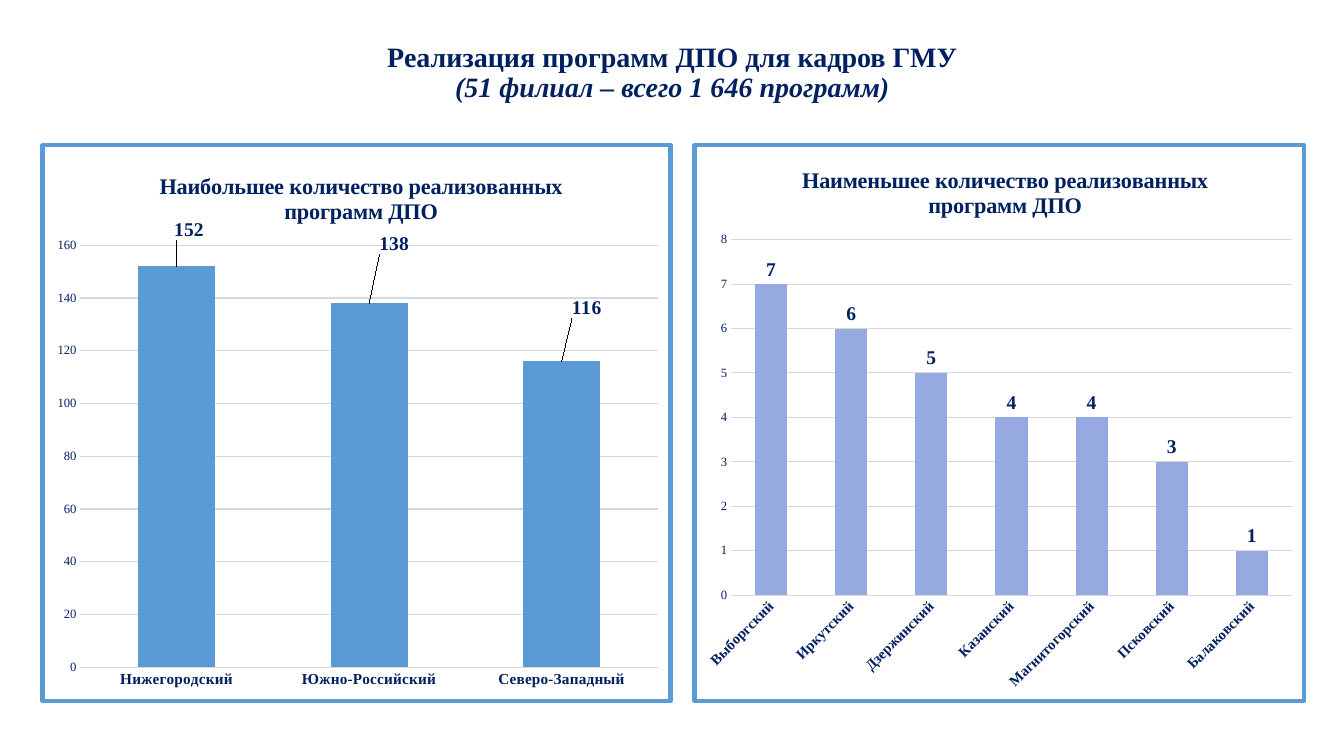
from dataclasses import dataclass

from lxml import etree
from pptx import Presentation
from pptx.chart.data import CategoryChartData
from pptx.dml.color import RGBColor
from pptx.enum import chart as ch, text as tx
from pptx.oxml import parse_xml
from pptx.oxml.ns import nsdecls, qn
from pptx.util import Cm, Pt

NAVY = RGBColor(0x00, 0x20, 0x60)
BLUE = RGBColor(0x5B, 0x9B, 0xD5)
LILAC = RGBColor(0x97, 0xA9, 0xE1)
GRID = RGBColor(0xD9, 0xD9, 0xD9)
FONT = "Times New Roman"


@dataclass(frozen=True)
class Panel:
    heading: str
    left: float
    width: float
    branches: dict[str, int]
    bar_color: RGBColor
    maximum: int
    step: int
    branch_size: float
    rotation: int
    heading_place: tuple[float, ...]
    plot_place: tuple[float, ...]
    label_shifts: tuple[tuple[float, float], ...] = ()


PANELS = [
    Panel(
        "Наибольшее количество реализованных программ ДПО",
        1.02, 15.93,
        {"Нижегородский": 152, "Южно-Российский": 138, "Северо-Западный": 116},
        BLUE, 160, 20, 11, 0,
        (0.18, 0.04), (0.06, 0.18, 0.92, 0.76),
        ((0.02, -0.04), (0.04, -0.08), (0.04, -0.07)),
    ),
    Panel(
        "Наименьшее количество реализованных программ ДПО",
        17.45, 15.47,
        {"Выборгский": 7, "Иркутский": 6, "Дзержинский": 5, "Казанский": 4,
         "Магнитогорский": 4, "Псковский": 3, "Балаковский": 1},
        LILAC, 8, 1, 10.5, -45,
        (0.17, 0.03), (0.06, 0.17, 0.92, 0.64),
    ),
]


def style_font(font, size: float, bold: bool = False, italic: bool = False) -> None:
    font.name = FONT
    font.size = Pt(size)
    font.bold = bold
    font.italic = italic
    font.color.rgb = NAVY


def write(paragraph, text: str, **style) -> None:
    run = paragraph.add_run()
    run.text = text
    style_font(run.font, **style)


def manual_layout(place: tuple[float, ...], shift: bool = False) -> etree._Element:
    target = "" if len(place) == 2 else '<c:layoutTarget val="inner"/>'
    modes = "" if shift else '<c:xMode val="edge"/><c:yMode val="edge"/>'
    sizes = "".join(f'<c:{key} val="{value}"/>' for key, value in zip("xywh", place))
    return parse_xml(
        f'<c:layout {nsdecls("c")}><c:manualLayout>{target}{modes}{sizes}'
        "</c:manualLayout></c:layout>"
    )


def set_layout(parent, layout: etree._Element, index: int) -> None:
    for old in parent.findall(qn("c:layout")):
        parent.remove(old)
    parent.insert(index, layout)


def draw_border(chart) -> None:
    border = parse_xml(
        f'<c:spPr {nsdecls("c", "a")}><a:noFill/><a:ln w="{Pt(3)}">'
        f'<a:solidFill><a:srgbClr val="{BLUE}"/></a:solidFill></a:ln></c:spPr>'
    )
    chart.element.find(qn("c:chart")).addnext(border)


def style_axes(chart, panel: Panel) -> None:
    branches, counts = chart.category_axis, chart.value_axis
    for axis in (branches, counts):
        axis.major_tick_mark = axis.minor_tick_mark = ch.XL_TICK_MARK.NONE
        axis.format.line.fill.background()
    style_font(branches.tick_labels.font, panel.branch_size, bold=True)
    body = branches._element.find(qn("c:txPr")).find(qn("a:bodyPr"))
    body.set("rot", str(panel.rotation * 60000))
    style_font(counts.tick_labels.font, 9)
    counts.minimum_scale = 0
    counts.maximum_scale = panel.maximum
    counts.major_unit = panel.step
    grid = counts.major_gridlines.format.line
    grid.color.rgb = GRID
    grid.width = Pt(0.75)


def style_bars(plot, panel: Panel) -> None:
    plot.gap_width = 150
    plot.vary_by_categories = False
    bars = plot.series[0]
    bars.format.fill.solid()
    bars.format.fill.fore_color.rgb = panel.bar_color
    labels = bars.data_labels
    labels.show_value = True
    labels.position = ch.XL_LABEL_POSITION.OUTSIDE_END
    style_font(labels.font, 14, bold=True)
    for index, shift in enumerate(panel.label_shifts):
        label = bars.points[index].data_label
        style_font(label.font, 14, bold=True)
        label.position = ch.XL_LABEL_POSITION.OUTSIDE_END
        entry = labels._element.findall(qn("c:dLbl"))[index]
        set_layout(entry, manual_layout(shift, shift=True), 1)


def draw_panel(slide, panel: Panel) -> None:
    data = CategoryChartData()
    data.categories = list(panel.branches)
    data.add_series("Программы ДПО", list(panel.branches.values()))
    chart = slide.shapes.add_chart(
        ch.XL_CHART_TYPE.COLUMN_CLUSTERED,
        Cm(panel.left), Cm(3.61), Cm(panel.width), Cm(14.1), data,
    ).chart
    chart.has_legend = False
    chart.font.name = FONT
    chart.font.size = Pt(10)
    chart.has_title = True
    heading = chart.chart_title.text_frame.paragraphs[0]
    heading.alignment = tx.PP_ALIGN.CENTER
    write(heading, panel.heading, size=16, bold=True)
    set_layout(chart.chart_title._element, manual_layout(panel.heading_place), 1)
    plot_area = chart.element.find(qn("c:chart")).find(qn("c:plotArea"))
    set_layout(plot_area, manual_layout(panel.plot_place), 0)
    style_axes(chart, panel)
    style_bars(chart.plots[0], panel)
    draw_border(chart)


def draw_title(slide) -> None:
    frame = slide.shapes.add_textbox(Cm(2.34), Cm(0.79), Cm(29.21), Cm(2.13)).text_frame
    frame.word_wrap = True
    frame.vertical_anchor = tx.MSO_ANCHOR.MIDDLE
    title = frame.paragraphs[0]
    title.alignment = tx.PP_ALIGN.CENTER
    title.line_spacing = 0.9
    write(title, "Реализация программ ДПО для кадров ГМУ", size=20, bold=True)
    title.add_line_break()
    write(title, "(51 филиал – всего 1 646 программ)", size=20, bold=True, italic=True)


def main() -> None:
    deck = Presentation()
    deck.slide_width, deck.slide_height = Cm(33.87), Cm(19.05)
    slide = deck.slides.add_slide(deck.slide_layouts[6])
    draw_title(slide)
    for panel in PANELS:
        draw_panel(slide, panel)
    deck.save("out.pptx")


if __name__ == "__main__":
    main()
